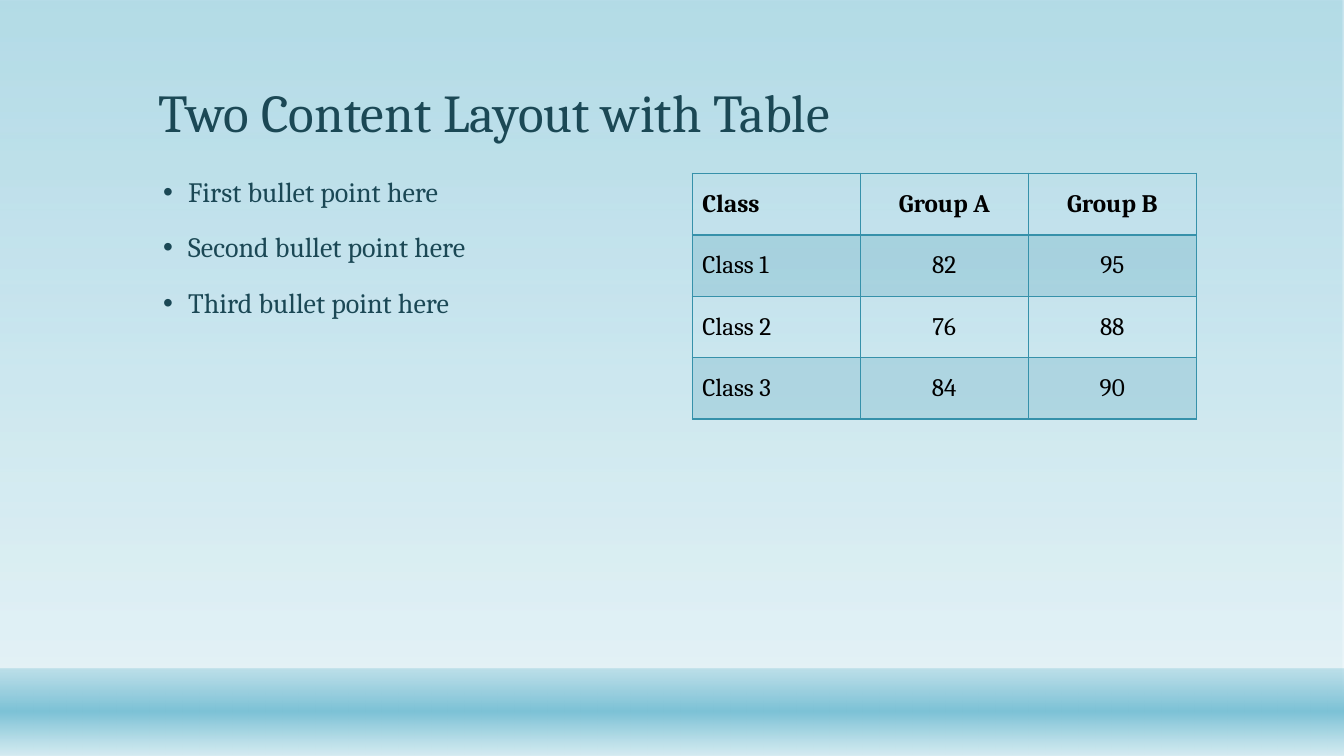
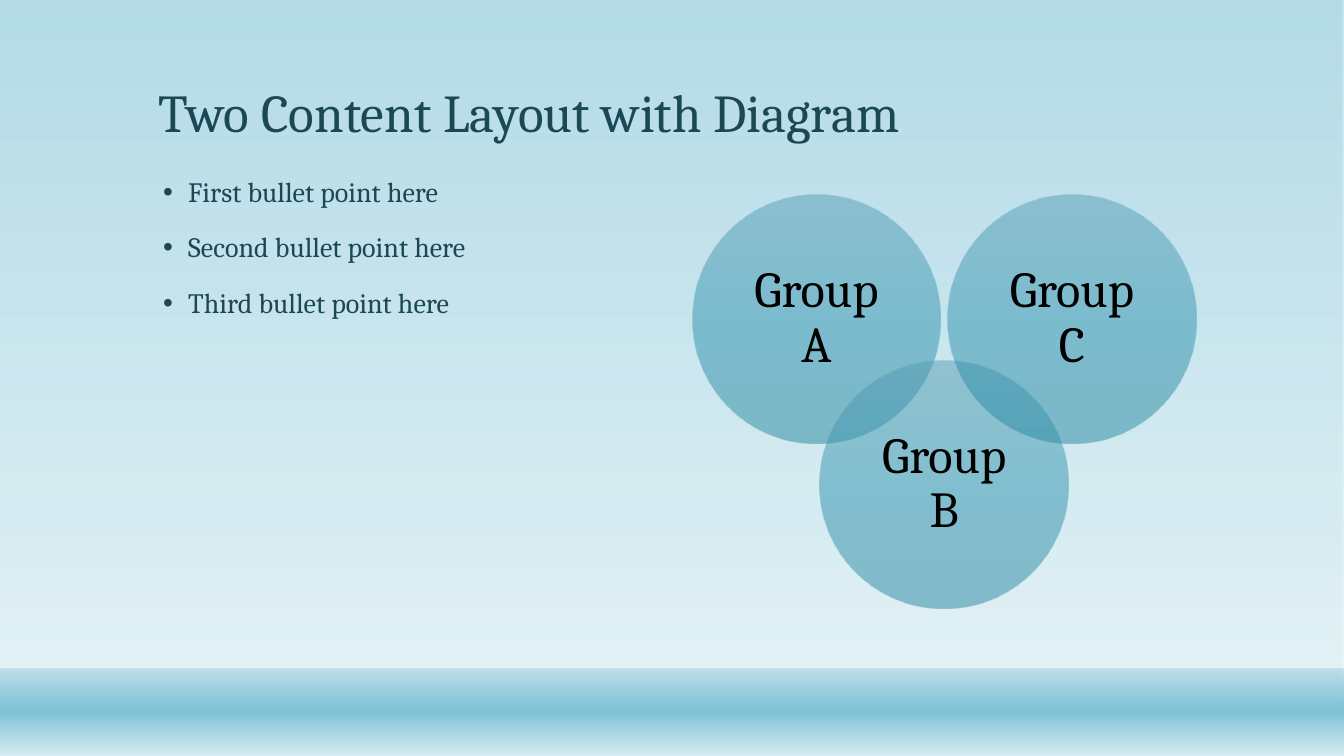
from dataclasses import dataclass

from lxml.etree import SubElement
from pptx import Presentation
from pptx.dml.color import RGBColor
from pptx.enum.shapes import MSO_SHAPE as Preset
from pptx.enum.text import MSO_ANCHOR as Anchor, MSO_AUTO_SIZE as AutoSize, PP_ALIGN as Align
from pptx.oxml.ns import qn
from pptx.util import Pt

FONT = "Cambria"
COLORS = {
    "ink": "1B4855",
    "black": "000000",
    "teal": "3691AA",
    "sky": "7DC2D6",
    "mist": "D4EBF1",
    "circle_top": "589EB5",
    "circle_middle": "3094B0",
    "circle_bottom": "2687A1",
}
SLIDE_WIDTH, SLIDE_HEIGHT = 960, 540
CONTENT_LEFT, CONTENT_TOP = 105.8, 123.8
FIGURE_LEFT, COLUMN_WIDTH = 494.5, 360
BULLETS = ["First bullet point here", "Second bullet point here", "Third bullet point here"]
SCORES = [
    ["Class", "Group A", "Group B"],
    ["Class 1", "82", "95"],
    ["Class 2", "76", "88"],
    ["Class 3", "84", "90"],
]
ROW_HEIGHT = 43.9


@dataclass(frozen=True)
class Stop:
    position: int
    color: str
    opacity: int = 100


@dataclass(frozen=True)
class Band:
    top: float
    height: float
    stops: tuple[Stop, ...]


@dataclass(frozen=True)
class Circle:
    label: str
    column: int
    top: float


BANDS = [
    Band(0, SLIDE_HEIGHT, (Stop(0, "sky", 58), Stop(88, "mist", 65))),
    Band(477.5, 62.5, (Stop(1, "sky", 38), Stop(49, "sky"), Stop(100, "mist", 89))),
]
CIRCLES = [Circle("Group A", 0, 139), Circle("Group B", 1, 257.3), Circle("Group C", 2, 139)]
CIRCLE_SIZE = 177.5
CIRCLE_STEP = (COLUMN_WIDTH - CIRCLE_SIZE) / 2
CIRCLE_STOPS = (
    Stop(0, "circle_top", 50),
    Stop(50, "circle_middle", 50),
    Stop(100, "circle_bottom", 50),
)


def add_color(parent, color: str, opacity: int = 100) -> None:
    tint = SubElement(parent, qn("a:srgbClr"), val=COLORS[color])
    if opacity < 100:
        SubElement(tint, qn("a:alpha"), val=str(opacity * 1000))


def style(paragraph, size: float, color: str, bold: bool = False) -> None:
    font = paragraph.font
    font.name, font.size, font.bold = FONT, Pt(size), bold
    font.color.rgb = RGBColor.from_string(COLORS[color])


def add_gradient_shape(slide, preset, left: float, top: float, width: float, height: float,
                       stops: tuple[Stop, ...]):
    shape = slide.shapes.add_shape(preset, Pt(left), Pt(top), Pt(width), Pt(height))
    shape.shadow.inherit = False
    shape.line.fill.background()
    shape.fill.gradient()
    shape.fill.gradient_angle = 270
    stop_list = shape.element.spPr.find(f".//{qn('a:gsLst')}")
    for default_stop in list(stop_list):
        stop_list.remove(default_stop)
    for stop in stops:
        entry = SubElement(stop_list, qn("a:gs"), pos=str(stop.position * 1000))
        add_color(entry, stop.color, stop.opacity)
    return shape


def move_bands_to_layout(slide, layout) -> None:
    for index, band in enumerate(BANDS):
        backdrop = add_gradient_shape(
            slide, Preset.RECTANGLE, 0, band.top, SLIDE_WIDTH, band.height, band.stops)
        layout.shapes.element.insert(2 + index, backdrop.element)


def set_title(slide, text: str) -> None:
    title = slide.shapes.title
    title.left, title.top = Pt(CONTENT_LEFT), Pt(21)
    title.width, title.height = Pt(749), Pt(85.5)
    frame = title.text_frame
    frame.text = text
    frame.auto_size = AutoSize.NONE
    frame.vertical_anchor = Anchor.BOTTOM
    heading = frame.paragraphs[0]
    heading.alignment = Align.LEFT
    heading.line_spacing = 0.9
    style(heading, 38, "ink")


def add_bullets(slide) -> None:
    body = slide.shapes.add_textbox(
        Pt(CONTENT_LEFT), Pt(CONTENT_TOP), Pt(COLUMN_WIDTH), Pt(326))
    frame = body.text_frame
    frame.word_wrap = True
    frame.text = "\n".join(BULLETS)
    for index, point in enumerate(frame.paragraphs):
        properties = point._p.get_or_add_pPr()
        properties.set("marL", str(Pt(21.6)))
        properties.set("indent", str(-Pt(18)))
        point.line_spacing = 0.9
        if index:
            point.space_before = Pt(18)
        SubElement(properties, qn("a:buFont"), typeface="Arial")
        SubElement(properties, qn("a:buChar"), char="•")
        style(point, 20, "ink")


def add_borders(cell, top: float, bottom: float) -> None:
    properties = cell._tc.get_or_add_tcPr()
    for side, weight in (("L", 1), ("R", 1), ("T", top), ("B", bottom)):
        border = SubElement(properties, qn(f"a:ln{side}"), w=str(Pt(weight)))
        add_color(SubElement(border, qn("a:solidFill")), "teal")


def add_score_table(slide) -> None:
    row_count, column_count = len(SCORES), len(SCORES[0])
    scores = slide.shapes.add_table(
        row_count, column_count, Pt(FIGURE_LEFT), Pt(CONTENT_TOP),
        Pt(COLUMN_WIDTH), Pt(ROW_HEIGHT * row_count)).table
    scores.first_row = scores.horz_banding = False
    for row, values in enumerate(SCORES):
        for column, value in enumerate(values):
            cell = scores.cell(row, column)
            cell.text = value
            cell.vertical_anchor = Anchor.MIDDLE
            entry = cell.text_frame.paragraphs[0]
            entry.alignment = Align.CENTER if column else Align.LEFT
            style(entry, 18, "black", bold=row == 0)
            add_borders(cell, top=2 if row == 1 else 1, bottom=2 if row == 0 else 1)
            if row % 2:
                tint = SubElement(cell._tc.get_or_add_tcPr(), qn("a:solidFill"))
                add_color(tint, "teal", 20)
            else:
                cell.fill.background()


def add_circle(slide, circle: Circle) -> None:
    left = FIGURE_LEFT + circle.column * CIRCLE_STEP
    group = add_gradient_shape(
        slide, Preset.OVAL, left, circle.top, CIRCLE_SIZE, CIRCLE_SIZE, CIRCLE_STOPS)
    frame = group.text_frame
    frame.text = circle.label
    frame.word_wrap = True
    frame.vertical_anchor = Anchor.MIDDLE
    frame.margin_left = frame.margin_right = frame.margin_top = frame.margin_bottom = Pt(11)
    label = frame.paragraphs[0]
    label.alignment = Align.CENTER
    label.line_spacing = 0.9
    style(label, 36, "black")


def add_content_slide(deck, layout, title: str):
    slide = deck.slides.add_slide(layout)
    set_title(slide, title)
    add_bullets(slide)
    return slide


def main() -> None:
    deck = Presentation()
    deck.slide_width, deck.slide_height = Pt(SLIDE_WIDTH), Pt(SLIDE_HEIGHT)
    layout = deck.slide_layouts.get_by_name("Title Only")

    table_slide = add_content_slide(deck, layout, "Two Content Layout with Table")
    move_bands_to_layout(table_slide, layout)
    add_score_table(table_slide)

    diagram_slide = add_content_slide(deck, layout, "Two Content Layout with Diagram")
    for circle in CIRCLES:
        add_circle(diagram_slide, circle)

    deck.save("out.pptx")


if __name__ == "__main__":
    main()
